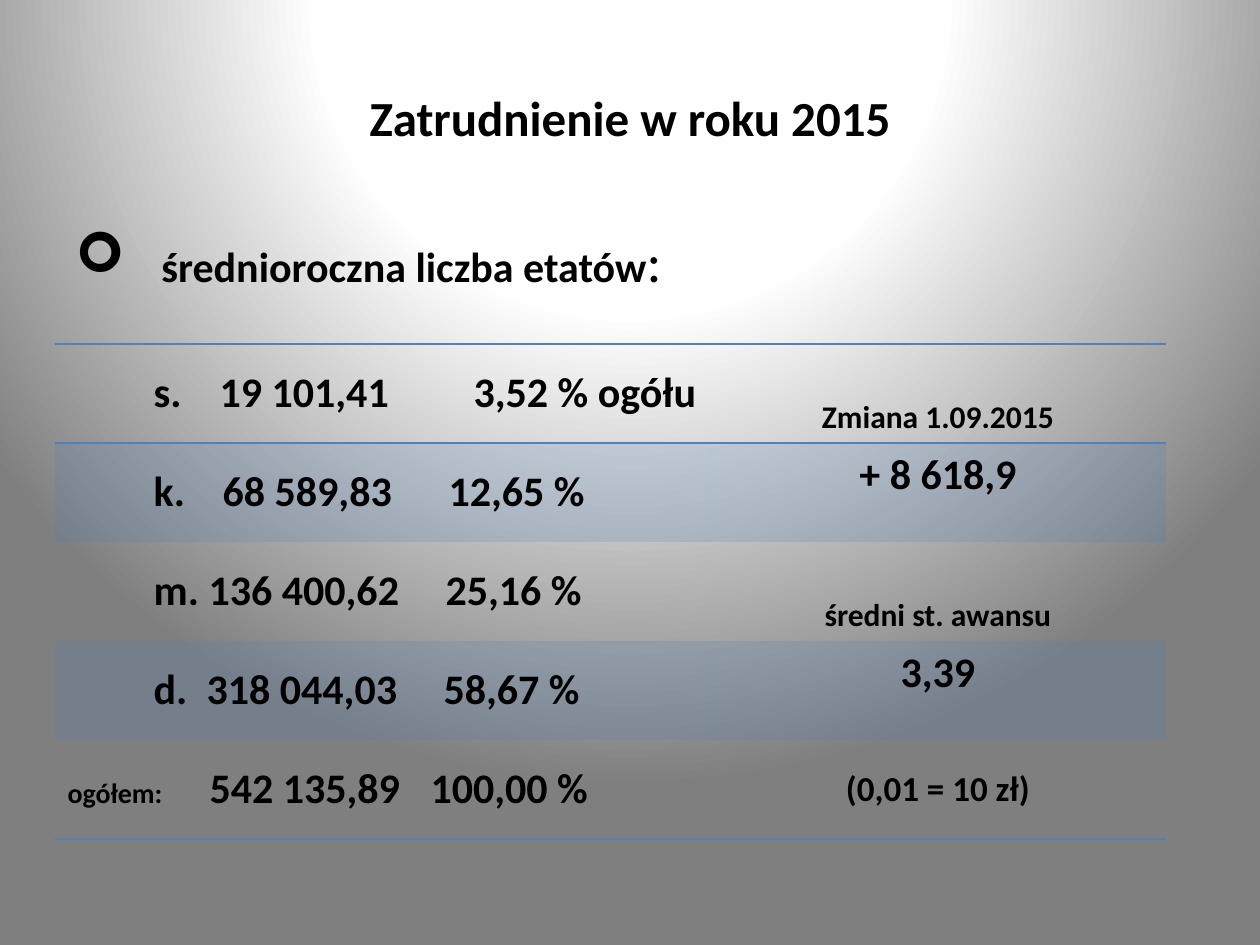
from lxml import etree
from pptx import Presentation
from pptx.dml.color import RGBColor
from pptx.enum.text import MSO_ANCHOR, PP_ALIGN
from pptx.oxml import parse_xml
from pptx.oxml.ns import nsdecls, qn
from pptx.util import Emu, Pt

SCALE = 914400 // 126
BLUE = "4F81BD"
NO_STYLE = "{2D5ABB26-0587-4C30-8999-92F81FD0307C}"
ROWS = [
    ([86, 152, 406], [("\ts.\t19 101,41\t3,52 % ogółu", 24)],
     "Zmiana 1.09.2015", 18, MSO_ANCHOR.BOTTOM),
    ([86, 155, 381], [("\tk.\t68 589,83\t12,65 %", 24)],
     "+ 8 618,9", 24, MSO_ANCHOR.TOP),
    ([86, 141, 378], [("\tm.\t136 400,62\t25,16 %", 24)],
     "średni st. awansu", 18, MSO_ANCHOR.BOTTOM),
    ([86, 139, 376], [("\td.\t318 044,03\t58,67 %", 24)],
     "3,39", 24, MSO_ANCHOR.TOP),
    ([142, 363], [("ogółem:", 16), ("\t542 135,89\t100,00 %", 24)],
     "(0,01 = 10 zł)", 20, MSO_ANCHOR.MIDDLE),
]


def px(length):
    return Emu(length * SCALE)


def color(value):
    return RGBColor.from_string(value)


def add_run(para, text, size, bold=True):
    span = para.add_run()
    span.text = text
    span.font.name = "Calibri"
    span.font.size = Pt(size)
    span.font.bold = bold
    span.font.color.rgb = color("000000")


def set_background(page):
    page.background.fill.solid()
    properties = page.element.find(".//" + qn("p:bgPr"))
    stops = "".join(
        f'<a:gs pos="{position * 1000}"><a:srgbClr val="{value}"/></a:gs>'
        for position, value in [(0, "FFFFFF"), (40, "FEFEFE"), (100, "7F7F7F")]
    )
    gradient = parse_xml(
        f'<a:gradFill {nsdecls("a")} rotWithShape="1"><a:gsLst>{stops}</a:gsLst>'
        '<a:path path="circle"><a:fillToRect l="50000" t="-80000" r="50000" b="180000"/>'
        '</a:path></a:gradFill>'
    )
    properties.replace(properties[0], gradient)


def add_title(page):
    title = page.shapes.title
    title.left, title.top, title.width, title.height = map(px, (63, 38, 1134, 157))
    title.text_frame.vertical_anchor = MSO_ANCHOR.MIDDLE
    para = title.text_frame.paragraphs[0]
    para.alignment = PP_ALIGN.CENTER
    add_run(para, "Zatrudnienie w roku 2015", 28)


def add_bullet_line(page):
    box = page.shapes.add_textbox(px(63), px(220), px(1134), px(90))
    box.text_frame.word_wrap = True
    para = box.text_frame.paragraphs[0]
    properties = para._p.get_or_add_pPr()
    properties.set("marL", str(px(86)))
    properties.set("indent", str(-px(86)))
    etree.SubElement(properties, qn("a:buSzPct"), val="133000")
    etree.SubElement(properties, qn("a:buFont"), typeface="Wingdings")
    etree.SubElement(properties, qn("a:buChar"), char="➢")
    add_run(para, "średnioroczna liczba etatów", 24)
    add_run(para, ":", 32, False)


def set_tabs(para, stops):
    tabs = etree.SubElement(para._p.get_or_add_pPr(), qn("a:tabLst"))
    for stop in stops:
        etree.SubElement(tabs, qn("a:tab"), pos=str(px(stop)), algn="l")


def style_cell(cell, banded, edges):
    properties = cell._tc.get_or_add_tcPr()
    if banded:
        cell.fill.solid()
        cell.fill.fore_color.rgb = color(BLUE)
        fill_color = properties.find(".//" + qn("a:srgbClr"))
        etree.SubElement(fill_color, qn("a:alpha"), val="20000")
    else:
        cell.fill.background()
    for position, edge in enumerate(edges):
        properties.insert(position, parse_xml(
            f'<a:{edge} {nsdecls("a")} w="{Pt(1)}"><a:solidFill>'
            f'<a:srgbClr val="{BLUE}"/></a:solidFill></a:{edge}>'
        ))


def add_employment_table(page):
    frame = page.shapes.add_table(len(ROWS), 2, px(55), px(344), px(1111), px(495))
    table = frame.table
    table.first_row = False
    table.horz_banding = False
    frame.element.find(".//" + qn("a:tableStyleId")).text = NO_STYLE
    table.columns[0].width, table.columns[1].width = px(655), px(456)
    borders = {0: ["lnT", "lnB"], len(ROWS) - 1: ["lnB"]}
    for index, (stops, spans, note, size, anchor) in enumerate(ROWS):
        table.rows[index].height = px(99)
        figures, remark = table.cell(index, 0), table.cell(index, 1)
        for cell in (figures, remark):
            style_cell(cell, index % 2 == 1, borders.get(index, []))
        figures.vertical_anchor = MSO_ANCHOR.MIDDLE
        para = figures.text_frame.paragraphs[0]
        set_tabs(para, stops)
        for text, span_size in spans:
            add_run(para, text, span_size)
        remark.vertical_anchor = anchor
        para = remark.text_frame.paragraphs[0]
        para.alignment = PP_ALIGN.CENTER
        add_run(para, note, size)


def main():
    deck = Presentation()
    deck.slide_width, deck.slide_height = px(1260), px(945)
    page = deck.slides.add_slide(deck.slide_layouts[5])
    set_background(page)
    add_title(page)
    add_bullet_line(page)
    add_employment_table(page)
    deck.save("out.pptx")


if __name__ == "__main__":
    main()
